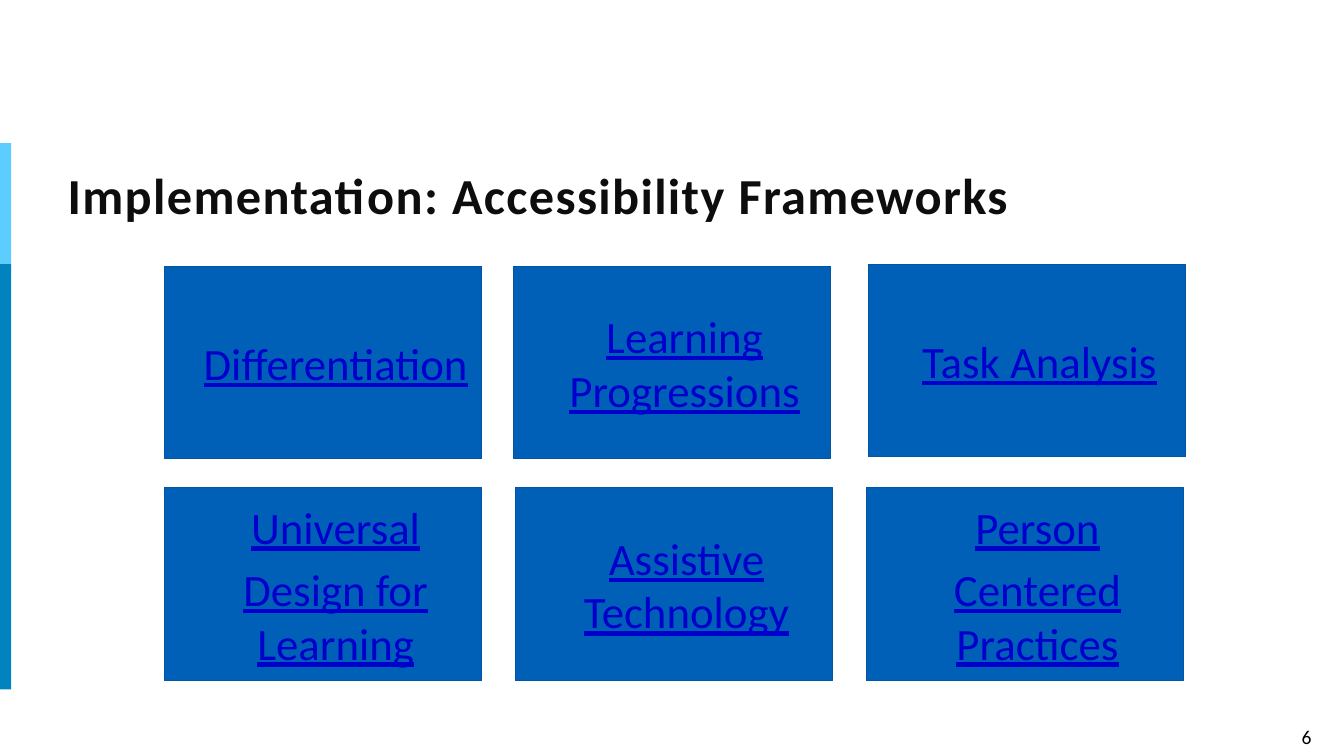
from dataclasses import dataclass

from pptx import Presentation
from pptx.dml.color import RGBColor
from pptx.enum.shapes import MSO_SHAPE
from pptx.enum.text import MSO_ANCHOR, MSO_AUTO_SIZE, PP_ALIGN
from pptx.util import Emu, Pt

RECTANGLE = MSO_SHAPE.RECTANGLE
MIDDLE = MSO_ANCHOR.MIDDLE
CENTER, LEFT = PP_ALIGN.CENTER, PP_ALIGN.LEFT
NO_AUTOFIT = MSO_AUTO_SIZE.NONE

EMU_PER_PX = 9144  # 100 px to the inch
TITLE_ONLY = 5
FONT = "Calibri"
COLORS = {
    "title": "0D0D0D",
    "number": "000000",
    "link": "0000CC",
    "card": "0060B8",
    "card_edge": "0055A5",
    "stripe_light": "5DCDFF",
    "stripe_dark": "0083BF",
}
CARD_WIDTH, CARD_HEIGHT = 315, 191


@dataclass(frozen=True)
class Stripe:
    top: int
    height: int
    color: str


@dataclass(frozen=True)
class Card:
    left: int
    top: int
    lines: tuple[str, ...]


STRIPES = (
    Stripe(142, 121, "stripe_light"),
    Stripe(262, 422, "stripe_dark"),
)
CARDS = (
    Card(163, 264, ("Differentiation",)),
    Card(509, 264, ("Learning Progressions",)),
    Card(861, 262, ("Task Analysis",)),
    Card(163, 484, ("Universal", "Design for Learning")),
    Card(511, 484, ("Assistive Technology",)),
    Card(859, 484, ("Person", "Centered Practices")),
)


def px(length: int) -> Emu:
    return Emu(length * EMU_PER_PX)


def rgb(name: str) -> RGBColor:
    return RGBColor.from_string(COLORS[name])


def place(shape, left: int, top: int, width: int, height: int) -> None:
    shape.left, shape.top = px(left), px(top)
    shape.width, shape.height = px(width), px(height)


def set_frame(frame, left: int, top: int, right: int, bottom: int) -> None:
    """Set the insets of a wrapped, vertically centred text frame."""
    frame.margin_left, frame.margin_top = px(left), px(top)
    frame.margin_right, frame.margin_bottom = px(right), px(bottom)
    frame.word_wrap = True
    frame.auto_size = NO_AUTOFIT
    frame.vertical_anchor = MIDDLE


def set_font(paragraph, size: int, color: str, align=CENTER) -> None:
    paragraph.alignment = align
    paragraph.font.name = FONT
    paragraph.font.size = Pt(size)
    paragraph.font.color.rgb = rgb(color)


def add_rectangle(page, left: int, top: int, width: int, height: int, color: str):
    box = page.shapes.add_shape(RECTANGLE, px(left), px(top), px(width), px(height))
    box.shadow.inherit = False
    box.fill.solid()
    box.fill.fore_color.rgb = rgb(color)
    box.line.fill.background()
    return box


def add_title(page, text: str) -> None:
    title = page.shapes.title
    place(title, 67, 128, 1201, 126)
    set_frame(title.text_frame, 0, 20, 10, 5)
    paragraph = title.text_frame.paragraphs[0]
    span = paragraph.add_run()
    span.text = text
    set_font(paragraph, 36, "title", LEFT)
    paragraph.font.bold = True
    paragraph.line_spacing = 0.8
    span.font._element.set("spc", "100")


def add_card(page, card: Card) -> None:
    box = add_rectangle(page, card.left, card.top, CARD_WIDTH, CARD_HEIGHT, "card")
    box.line.color.rgb = rgb("card_edge")
    box.line.width = Pt(0.75)
    set_frame(box.text_frame, 30, 5, 5, 5)
    box.text_frame.text = "\n".join(card.lines)
    for paragraph in box.text_frame.paragraphs:
        set_font(paragraph, 32, "link")
        paragraph.font.underline = True
        paragraph.space_after = Pt(6)


def add_page_number(page, number: str) -> None:
    box = page.shapes.add_textbox(px(1263), px(714), px(66), px(34))
    set_frame(box.text_frame, 10, 5, 10, 5)
    box.text_frame.text = number
    set_font(box.text_frame.paragraphs[0], 14, "number")


def main() -> None:
    deck = Presentation()
    deck.slide_width, deck.slide_height = px(1333), px(750)
    page = deck.slides.add_slide(deck.slide_layouts[TITLE_ONLY])
    add_page_number(page, "6")
    for stripe in STRIPES:
        add_rectangle(page, 0, stripe.top, 11, stripe.height, stripe.color)
    add_title(page, "Implementation: Accessibility Frameworks")
    for card in CARDS:
        add_card(page, card)
    deck.save("out.pptx")


if __name__ == "__main__":
    main()
